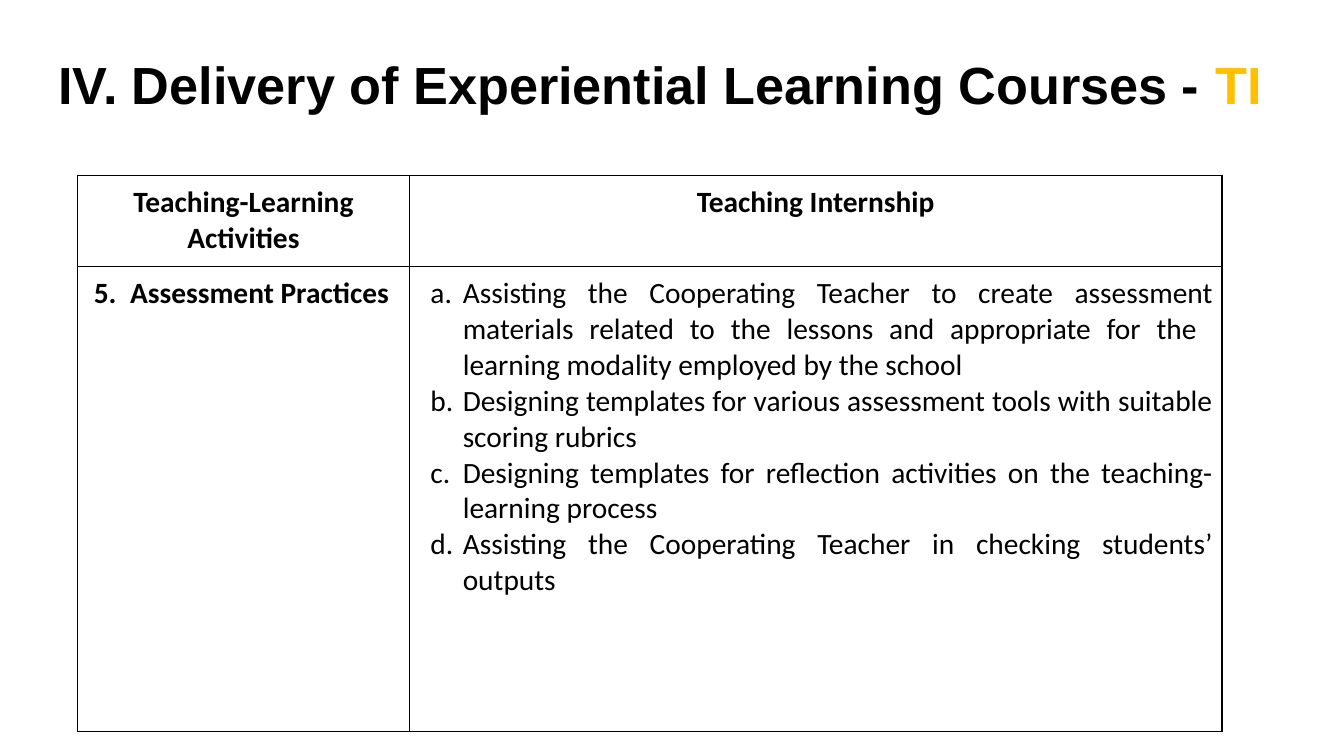
"""Build the slide on assessment practices in the teaching internship."""
from lxml.etree import SubElement
from pptx import Presentation
from pptx.dml.color import RGBColor
from pptx.enum.text import MSO_ANCHOR, MSO_AUTO_SIZE, PP_ALIGN
from pptx.oxml.ns import qn
from pptx.util import Inches, Pt

BLACK, GOLD = "000000", "FFC000"
TITLE_RUNS = [("IV. Delivery of Experiential Learning Courses - ", BLACK), ("TI", GOLD)]
TITLE_BOX = (0.45, 0.38, 12.42, 0.89)
TABLE_BOX = (0.77, 1.74, 11.35, 5.52)
COLUMN_WIDTHS = (3.29, 8.06)
ROW_HEIGHTS = (0.9, 4.62)
TITLE_INSET, CELL_INSET = 0.13, 0.09
INNER_LINE, OUTER_LINE = 0.75, 1
HEADINGS = ["Teaching-Learning Activities", "Teaching Internship"]
PRACTICES = ["Assessment Practices"]
ACTIVITIES = [
    "Assisting the Cooperating Teacher to create assessment materials related to the lessons "
    "and appropriate for the  learning modality employed by the school",
    "Designing templates for various assessment tools with suitable scoring rubrics",
    "Designing templates for reflection activities on the teaching-learning process",
    "Assisting the Cooperating Teacher in checking students’ outputs",
]
NUMBERS = {"indent": (0.43, -0.36), "scheme": {"type": "arabicPeriod", "startAt": "5"}}
LETTERS = {"indent": (0.44, -0.32), "scheme": {"type": "alphaLcPeriod"}}
CELLS = [
    [([heading], True, PP_ALIGN.CENTER, None) for heading in HEADINGS],
    [(PRACTICES, True, PP_ALIGN.JUSTIFY, NUMBERS), (ACTIVITIES, False, PP_ALIGN.JUSTIFY, LETTERS)],
]


def color(hex_string):
    return RGBColor.from_string(hex_string)


def apply(target, values):
    for name, value in values.items():
        setattr(target, name, value)


def margins(inset):
    return {f"margin_{side}": Inches(inset) for side in ("left", "top", "right", "bottom")}


def add_text(paragraph, text, font_name, size, bold, hex_string):
    run = paragraph.add_run()
    run.text = text
    apply(run.font, {"name": font_name, "size": Pt(size), "bold": bold})
    run.font.color.rgb = color(hex_string)


def add_solid_color(parent, hex_string):
    SubElement(parent, qn("a:srgbClr"), val=hex_string)


def number_paragraph(paragraph, style):
    left, hanging = style["indent"]
    properties = paragraph._p.get_or_add_pPr()
    properties.set("marL", str(Inches(left)))
    properties.set("indent", str(Inches(hanging)))
    add_solid_color(SubElement(properties, qn("a:buClr")), BLACK)
    SubElement(properties, qn("a:buAutoNum"), **style["scheme"])


def add_borders(cell, widths):
    properties = cell._tc.get_or_add_tcPr()
    for side, width in widths.items():
        line = SubElement(properties, qn(f"a:ln{side}"), w=str(Pt(width)))
        add_solid_color(SubElement(line, qn("a:solidFill")), BLACK)


def fill_cell(cell, texts, bold, alignment, numbering):
    frame = cell.text_frame
    for index, text in enumerate(texts):
        paragraph = frame.add_paragraph() if index else frame.paragraphs[0]
        paragraph.alignment = alignment
        if numbering:
            number_paragraph(paragraph, numbering)
        add_text(paragraph, text, "Calibri", 21, bold, BLACK)


def add_title(slide):
    title = slide.shapes.title
    apply(title, dict(zip(("left", "top", "width", "height"), map(Inches, TITLE_BOX))))
    frame = title.text_frame
    apply(frame, {"word_wrap": True, "auto_size": MSO_AUTO_SIZE.NONE,
                  "vertical_anchor": MSO_ANCHOR.MIDDLE, **margins(TITLE_INSET)})
    paragraph = frame.paragraphs[0]
    paragraph.alignment = PP_ALIGN.LEFT
    for text, hex_string in TITLE_RUNS:
        add_text(paragraph, text, "Arial", 37.3, True, hex_string)


def add_activity_table(slide):
    shape = slide.shapes.add_table(len(CELLS), len(COLUMN_WIDTHS), *map(Inches, TABLE_BOX))
    table = shape.table
    apply(table, {"first_row": False, "horz_banding": False})
    for column, width in zip(table.columns, COLUMN_WIDTHS):
        column.width = Inches(width)
    for row, height in zip(table.rows, ROW_HEIGHTS):
        row.height = Inches(height)
    for row_index, row in enumerate(CELLS):
        top, bottom = (INNER_LINE, OUTER_LINE) if row_index else (OUTER_LINE, INNER_LINE)
        for column_index, content in enumerate(row):
            cell = table.cell(row_index, column_index)
            apply(cell, {"vertical_anchor": MSO_ANCHOR.TOP, **margins(CELL_INSET)})
            add_borders(cell, {"L": OUTER_LINE, "R": OUTER_LINE, "T": top, "B": bottom})
            cell.fill.background()
            fill_cell(cell, *content)


def main():
    presentation = Presentation()
    apply(presentation, {"slide_width": Inches(13.33), "slide_height": Inches(7.5)})
    slide = presentation.slides.add_slide(presentation.slide_layouts[5])
    add_title(slide)
    add_activity_table(slide)
    presentation.save("out.pptx")


if __name__ == "__main__":
    main()
